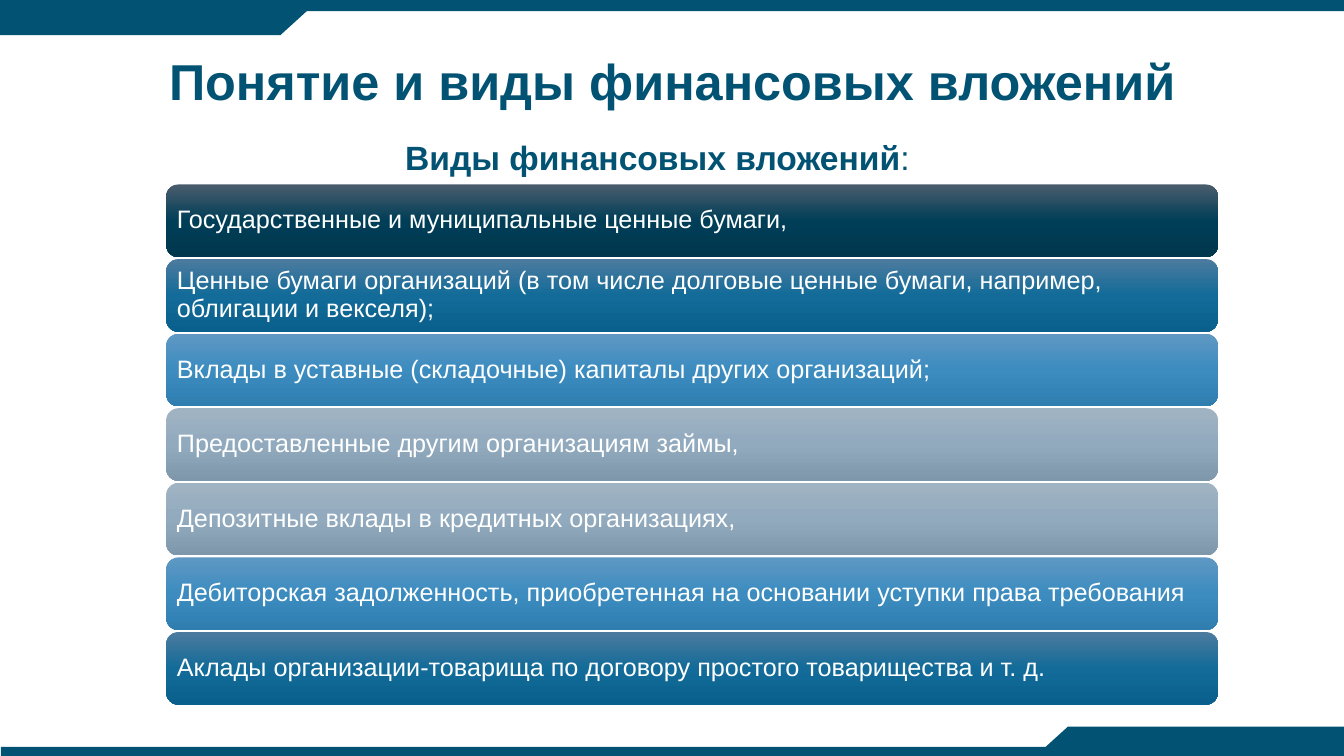
from lxml import etree
from pptx import Presentation
from pptx import util as u
from pptx.dml.color import RGBColor
from pptx.enum import shapes, text
from pptx.oxml import ns

# Content
TITLE = "Понятие и виды финансовых вложений"
LEAD = [("Виды финансовых вложений", True), (":", False)]
KINDS = [
    ("Государственные и муниципальные ценные бумаги,", "navy"),
    ("Ценные бумаги организаций (в том числе долговые ценные бумаги, "
     "например, облигации и векселя);", "teal"),
    ("Вклады в уставные (складочные) капиталы других организаций;", "blue"),
    ("Предоставленные другим организациям займы,", "gray"),
    ("Депозитные вклады в кредитных организациях,", "gray"),
    ("Дебиторская задолженность, приобретенная на основании уступки "
     "права требования", "blue"),
    ("Аклады организации-товарища по договору простого товарищества "
     "и т. д.", "teal"),
]


class Theme:
    font = "Arial"
    main, white = "025373", "FFFFFF"
    title, lead, body = 36, 24, 18
    grads = {
        "navy": ("4B5D6D", "003E57", "00374D"),
        "teal": ("4D7B9F", "126B98", "0A608C"),
        "blue": ("5F98C3", "3C8CC0", "307EB0"),
        "gray": ("A0B3C3", "92AABE", "7F97AB"),
    }


Box, Merge = shapes.MSO_SHAPE.RECTANGLE, shapes.MSO_SHAPE.FLOWCHART_MERGE
Round = shapes.MSO_SHAPE.ROUNDED_RECTANGLE
# Edge strips and corner tabs: shape, left, top, width, height, turn
EDGES = [
    (Box, 0, 0, 13.33, 0.11, 0),
    (Box, 0.01, 7.41, 13.33, 0.11, 0),
    (Box, 0, 0.05, 2.78, 0.3, 0),
    (Merge, 2.45, 0.05, 0.66, 0.3, 0),
    (Box, 10.59, 7.21, 2.78, 0.3, 0),
    (Merge, 10.26, 7.21, 0.66, 0.3, 180),
]
LEFT, TOP, WIDE, HIGH, STEP = 1.65, 1.83, 10.43, 0.72, 0.74


def place(item, *rect):
    item.left, item.top, item.width, item.height = map(u.Inches, rect)


def add_run(para, words, size, color, bold=False):
    run = para.add_run()
    run.text = words
    font = run.font
    font.name, font.size, font.bold = Theme.font, u.Pt(size), bold
    font.color.rgb = RGBColor.from_string(color)


def add_form(slide, kind, *rect):
    form = slide.shapes.add_shape(kind, *map(u.Inches, rect))
    form.shadow.inherit = False
    form.line.fill.background()
    return form


def shade(form, colors):
    """Fill from top to bottom with evenly spaced stops."""
    form.fill.gradient()
    form.fill.gradient_angle = 270
    stops = form._element.spPr.find(".//" + ns.qn("a:gsLst"))
    for old in list(stops):
        stops.remove(old)
    for i, color in enumerate(colors):
        pos = 100000 * i // (len(colors) - 1)
        stop = etree.SubElement(stops, ns.qn("a:gs"), pos=str(pos))
        etree.SubElement(stop, ns.qn("a:srgbClr"), val=color)


def main():
    deck = Presentation()
    deck.slide_width, deck.slide_height = u.Inches(13.33), u.Inches(7.5)
    slide = deck.slides.add_slide(deck.slide_layouts[5])

    # Edges
    for kind, x, y, w, h, turn in EDGES:
        form = add_form(slide, kind, x, y, w, h)
        form.rotation = turn
        form.fill.solid()
        form.fill.fore_color.rgb = RGBColor.from_string(Theme.main)

    # Title
    title = slide.shapes.title
    place(title, 0.92, 0.11, 11.5, 1.45)
    title.text_frame.vertical_anchor = text.MSO_ANCHOR.MIDDLE
    para = title.text_frame.paragraphs[0]
    para.alignment, para.line_spacing = text.PP_ALIGN.CENTER, 0.9
    add_run(para, TITLE, Theme.title, Theme.main, True)

    # Lead line
    lead = slide.shapes.add_textbox(0, 0, 0, 0)
    place(lead, 3.92, 1.11, 5.35, 0.63)
    lead.text_frame.word_wrap = False
    lead.text_frame.auto_size = text.MSO_AUTO_SIZE.SHAPE_TO_FIT_TEXT
    para = lead.text_frame.paragraphs[0]
    para.alignment, para.line_spacing = text.PP_ALIGN.JUSTIFY, 1.5
    for words, bold in LEAD:
        add_run(para, words, Theme.lead, Theme.main, bold)

    # Bars
    for i, (words, tone) in enumerate(KINDS):
        bar = add_form(slide, Round, LEFT, TOP + i * STEP, WIDE, HIGH)
        shade(bar, Theme.grads[tone])
        frame = bar.text_frame
        frame.word_wrap = True
        frame.vertical_anchor = text.MSO_ANCHOR.MIDDLE
        frame.margin_left = frame.margin_right = u.Inches(0.07)
        frame.margin_top = frame.margin_bottom = u.Inches(0.07)
        para = frame.paragraphs[0]
        para.alignment, para.line_spacing = text.PP_ALIGN.LEFT, 0.9
        add_run(para, words, Theme.body, Theme.white)

    deck.save("out.pptx")


if __name__ == "__main__":
    main()
